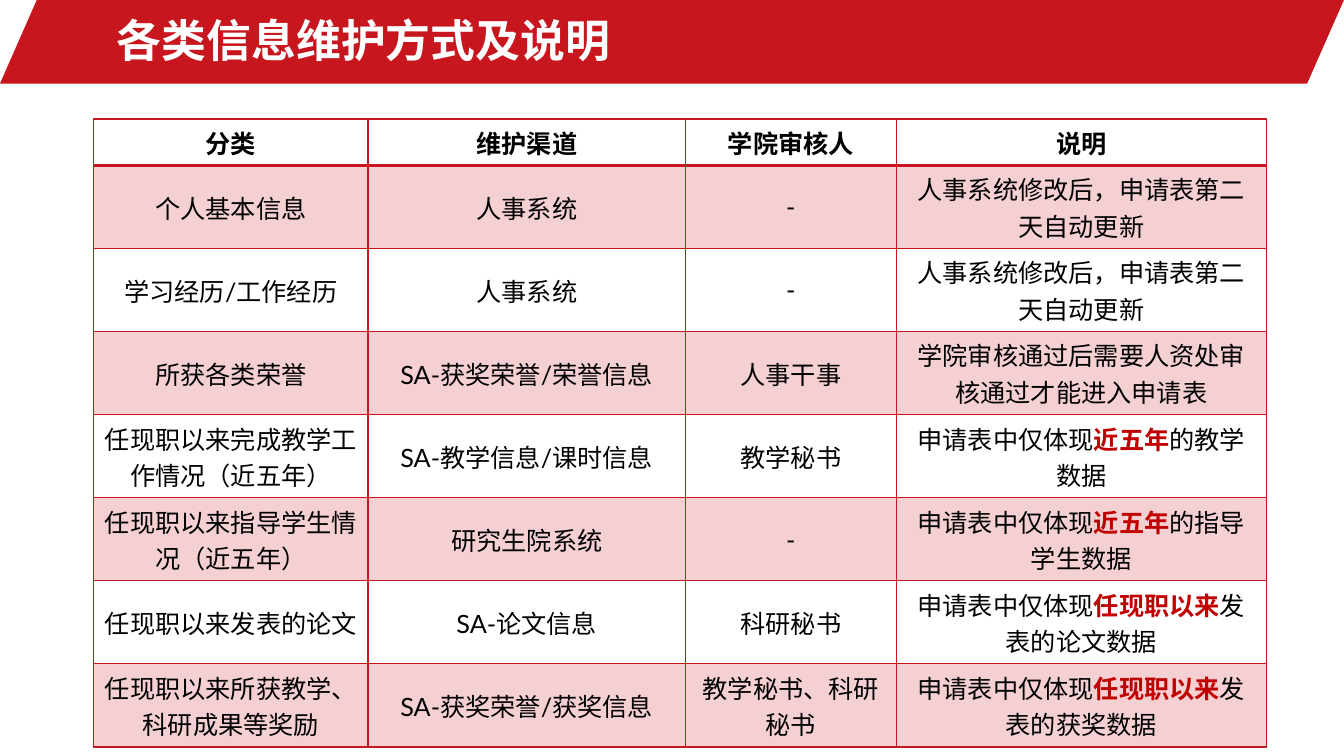
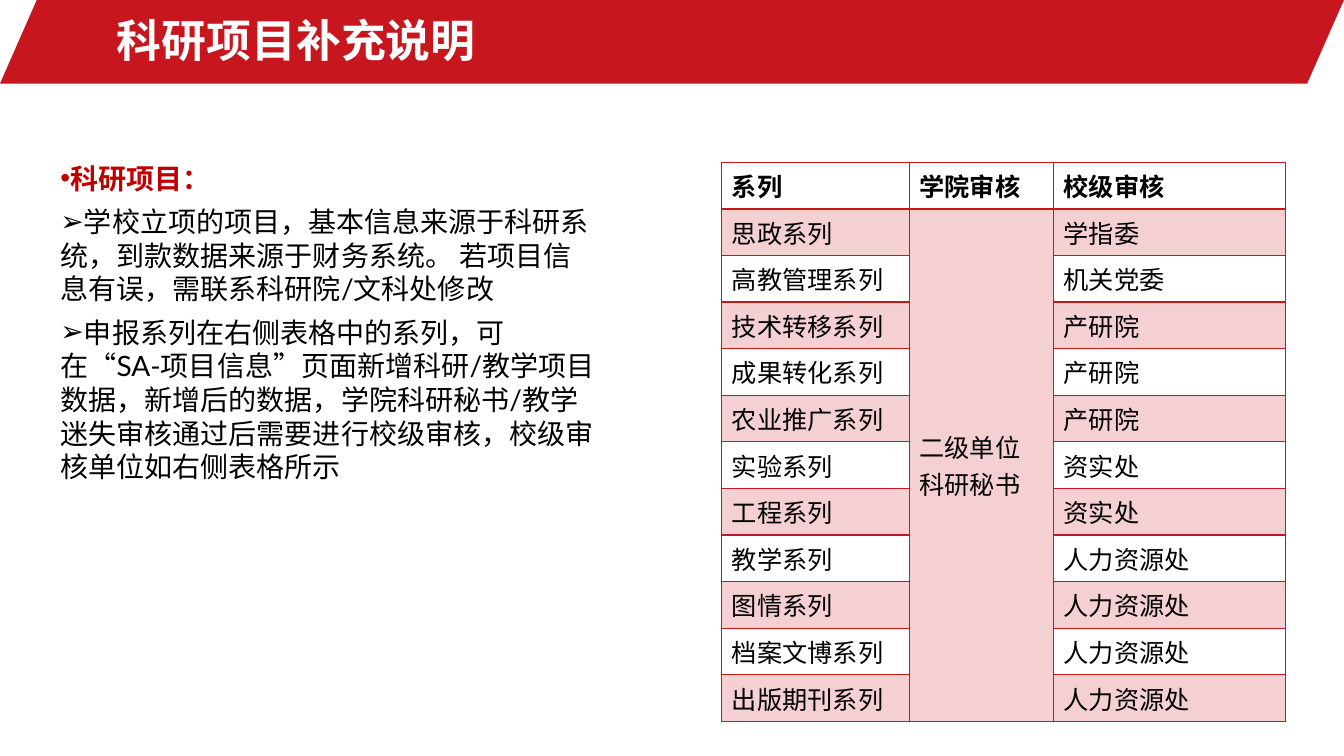
from dataclasses import dataclass
from lxml import etree
from pptx import Presentation
from pptx.dml.color import RGBColor
from pptx.enum.shapes import MSO_SHAPE, PP_PLACEHOLDER
from pptx.enum.text import MSO_ANCHOR, MSO_AUTO_SIZE, PP_ALIGN
from pptx.oxml.ns import qn
from pptx.util import Inches, Pt


@dataclass(frozen=True)
class Theme:
    font: str = "Lato"
    red: str = "C8161E"
    accent: str = "C00000"
    black: str = "000000"
    white: str = "FFFFFF"
    title_size: int = 32
    body_size: int = 20
    table_size: int = 18
    band_opacity: int = 20
    border: int = 1
    header_rule: int = 2


THEME = Theme()

# Content: text between bars is emphasised
CHANNELS_TITLE = "各类信息维护方式及说明"
CHANNELS = [
    ("分类", "维护渠道", "学院审核人", "说明"),
    ("个人基本信息", "人事系统", "-", "人事系统修改后，申请表第二天自动更新"),
    ("学习经历/工作经历", "人事系统", "-", "人事系统修改后，申请表第二天自动更新"),
    ("所获各类荣誉", "SA-获奖荣誉/荣誉信息", "人事干事",
     "学院审核通过后需要人资处审核通过才能进入申请表"),
    ("任现职以来完成教学工作情况（近五年）", "SA-教学信息/课时信息", "教学秘书",
     "申请表中仅体现|近五年|的教学数据"),
    ("任现职以来指导学生情况（近五年）", "研究生院系统", "-",
     "申请表中仅体现|近五年|的指导学生数据"),
    ("任现职以来发表的论文", "SA-论文信息", "科研秘书",
     "申请表中仅体现|任现职以来|发表的论文数据"),
    ("任现职以来所获教学、科研成果等奖励", "SA-获奖荣誉/获奖信息", "教学秘书、科研秘书",
     "申请表中仅体现|任现职以来|发表的获奖数据"),
]

PROJECTS_TITLE = "科研项目补充说明"
PROJECT_NOTES = [
    ("•", "科研项目："),
    ("➢", "学校立项的项目，基本信息来源于科研系统，到款数据来源于财务系统。 "
          "若项目信息有误，需联系科研院/文科处修改"),
    ("➢", "申报系列在右侧表格中的系列，可在“SA-项目信息”页面新增科研/教学项目数据，"
          "新增后的数据，学院科研秘书/教学迷失审核通过后需要进行校级审核，"
          "校级审核单位如右侧表格所示"),
]
COLLEGE_REVIEWER = "二级单位科研秘书"
REVIEWERS = [
    ("思政系列", "学指委"), ("高教管理系列", "机关党委"), ("技术转移系列", "产研院"),
    ("成果转化系列", "产研院"), ("农业推广系列", "产研院"), ("实验系列", "资实处"),
    ("工程系列", "资实处"), ("教学系列", "人力资源处"), ("图情系列", "人力资源处"),
    ("档案文博系列", "人力资源处"), ("出版期刊系列", "人力资源处"),
]


def style(font, size, color, bold=False):
    font.name = THEME.font
    font.size = Pt(size)
    font.bold = bold
    font.color.rgb = RGBColor.from_string(color)


def place(shape, left, top, width, height):
    shape.left, shape.top = Inches(left), Inches(top)
    shape.width, shape.height = Inches(width), Inches(height)


def set_up_master(prs, slide):
    """Give every slide the red band and the title position."""
    master = prs.slide_master
    place(master.placeholders.get(PP_PLACEHOLDER.TITLE), 1.06, 0.07, 12.21, 0.65)
    band = slide.shapes.add_shape(MSO_SHAPE.PARALLELOGRAM, 0, 0,
                                  prs.slide_width, Inches(0.83))
    band.adjustments[0] = 0.44
    band.shadow.inherit = False
    band.fill.solid()
    band.fill.fore_color.rgb = RGBColor.from_string(THEME.red)
    band.line.fill.background()
    band.element.nvSpPr.cNvPr.set("id", "100")
    master.shapes.element.insert(2, band.element)


def add_titled_slide(prs, layout_index, title):
    slide = prs.slides.add_slide(prs.slide_layouts[layout_index])
    frame = slide.shapes.title.text_frame
    frame.text = title
    frame.vertical_anchor = MSO_ANCHOR.MIDDLE
    frame.paragraphs[0].alignment = PP_ALIGN.LEFT
    style(frame.paragraphs[0].runs[0].font, THEME.title_size, THEME.white, True)
    return slide


def set_borders(cell, top, bottom):
    props = cell._tc.get_or_add_tcPr()
    sides = {"lnL": THEME.border, "lnR": THEME.border, "lnT": top, "lnB": bottom}
    for index, (side, width) in enumerate(sides.items()):
        line = etree.Element(qn(f"a:{side}"), w=str(Pt(width)))
        fill = etree.SubElement(line, qn("a:solidFill"))
        etree.SubElement(fill, qn("a:srgbClr"), val=THEME.red)
        props.insert(index, line)


def fill_cell(cell, shaded):
    if not shaded:
        cell.fill.background()
        return
    cell.fill.solid()
    cell.fill.fore_color.rgb = RGBColor.from_string(THEME.red)
    color = cell._tc.tcPr.find(f".//{qn('a:solidFill')}/{qn('a:srgbClr')}")
    etree.SubElement(color, qn("a:alpha"), val=str(THEME.band_opacity * 1000))


def write_cell(cell, text, header, align):
    paragraph = cell.text_frame.paragraphs[0]
    paragraph.alignment = align
    for index, part in enumerate(text.split("|")):
        run = paragraph.add_run()
        run.text = part
        emphasised = index % 2 == 1
        style(run.font, THEME.table_size,
              THEME.accent if emphasised else THEME.black, header or emphasised)


def add_grid(slide, rows, left, top, widths, header_height, row_height, align):
    heights = [header_height] + [row_height] * (len(rows) - 1)
    grid = slide.shapes.add_table(
        len(rows), len(widths), Inches(left), Inches(top),
        Inches(sum(widths)), Inches(sum(heights))).table
    grid.horz_banding = False
    for column, width in zip(grid.columns, widths):
        column.width = Inches(width)
    for r, (texts, height) in enumerate(zip(rows, heights)):
        grid.rows[r].height = Inches(height)
        for c, text in enumerate(texts):
            cell = grid.cell(r, c)
            cell.vertical_anchor = MSO_ANCHOR.MIDDLE
            fill_cell(cell, r % 2 == 1)
            set_borders(cell,
                        THEME.header_rule if r == 1 else THEME.border,
                        THEME.header_rule if r == 0 else THEME.border)
            if text:
                write_cell(cell, text, r == 0, align)
    return grid


def add_notes_list(slide, notes):
    body = slide.placeholders[1]
    place(body, 0.5, 1.55, 5.51, 5.12)
    frame = body.text_frame
    frame.text = "\n".join(text for _, text in notes)
    frame.auto_size = MSO_AUTO_SIZE.NONE
    for index, (paragraph, (bullet, _)) in enumerate(zip(frame.paragraphs, notes)):
        props = paragraph._p.get_or_add_pPr()
        props.set("marL", "0")
        props.set("indent", "0")
        etree.SubElement(props, qn("a:buChar"), char=bullet)
        paragraph.line_spacing = 1.0
        paragraph.space_before = Pt(7 if index else 0)
        heading = index == 0
        style(paragraph.runs[0].font, THEME.body_size,
              THEME.accent if heading else THEME.black, heading)


def main():
    prs = Presentation()
    prs.slide_width, prs.slide_height = Inches(13.33), Inches(7.5)

    # Maintenance channels
    channels = add_titled_slide(prs, 5, CHANNELS_TITLE)
    set_up_master(prs, channels)
    add_grid(channels, CHANNELS, 0.93, 1.18, [2.72, 3.15, 2.09, 3.67],
             0.46, 0.82, PP_ALIGN.CENTER)

    # Research projects, with one college reviewer for all series
    projects = add_titled_slide(prs, 1, PROJECTS_TITLE)
    add_notes_list(projects, PROJECT_NOTES)
    rows = [("系列", "学院审核", "校级审核")]
    rows += [(series, "" if i else COLLEGE_REVIEWER, school)
             for i, (series, school) in enumerate(REVIEWERS)]
    reviewers = add_grid(projects, rows, 7.16, 1.61, [1.86, 1.43, 2.3],
                         0.46, 0.46, PP_ALIGN.LEFT)
    reviewers.cell(1, 1).merge(reviewers.cell(len(REVIEWERS), 1))

    prs.save("out.pptx")


if __name__ == "__main__":
    main()
